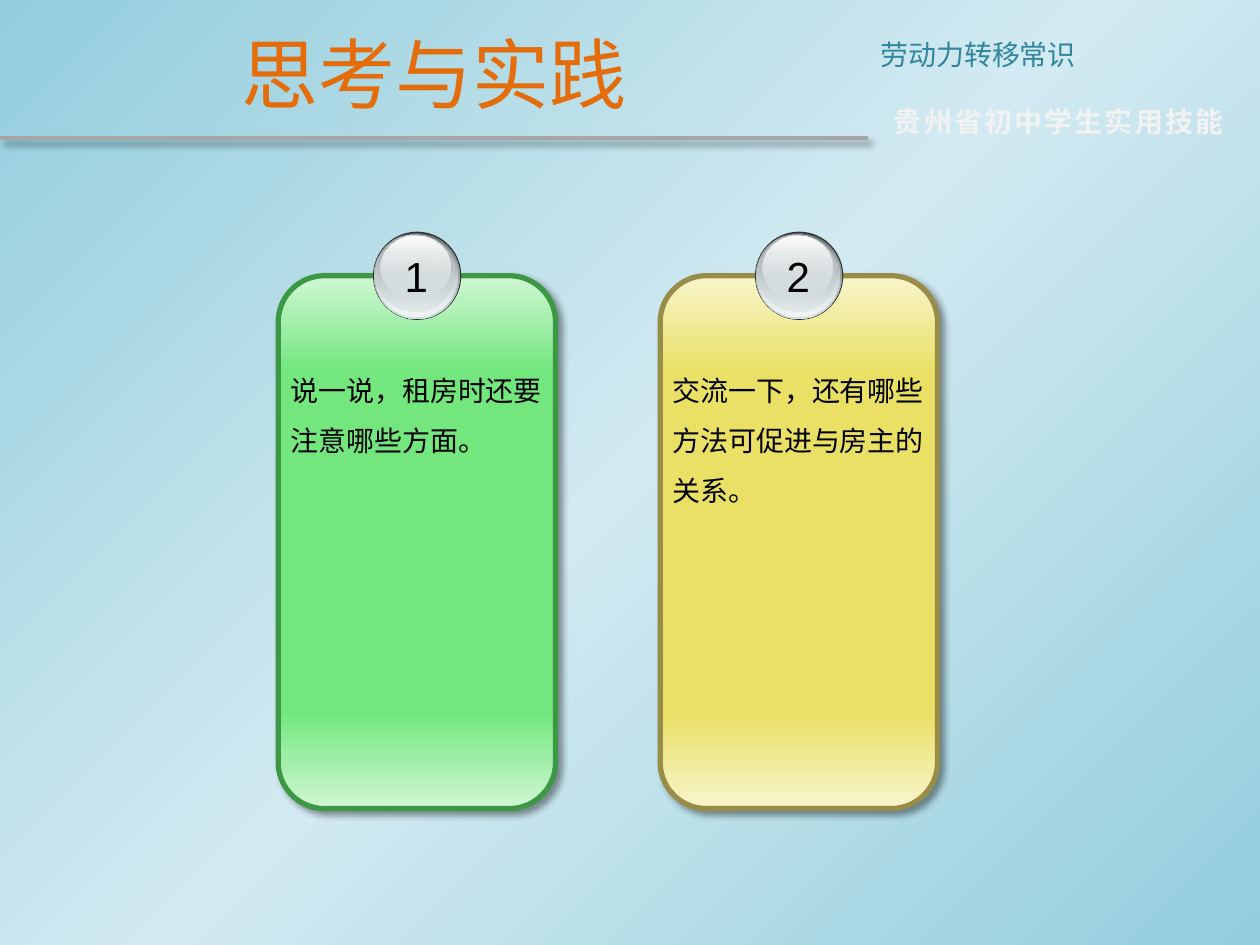
from lxml import etree
from pptx import Presentation
from pptx.dml.color import RGBColor
from pptx.enum.shapes import MSO_CONNECTOR, MSO_SHAPE
from pptx.enum.text import MSO_ANCHOR, MSO_AUTO_SIZE, PP_ALIGN
from pptx.oxml.ns import qn
from pptx.util import Cm, Pt

ROUND, OVAL = MSO_SHAPE.ROUNDED_RECTANGLE, MSO_SHAPE.OVAL
STRAIGHT = MSO_CONNECTOR.STRAIGHT
MIDDLE = MSO_ANCHOR.MIDDLE
GROW, FIXED = MSO_AUTO_SIZE.SHAPE_TO_FIT_TEXT, MSO_AUTO_SIZE.NONE
LEFT, CENTER, JUSTIFY = PP_ALIGN.LEFT, PP_ALIGN.CENTER, PP_ALIGN.JUSTIFY


def color(code):
    return RGBColor.from_string(code)


def add(parent, tag, **attrs):
    node = etree.SubElement(parent, qn(tag))
    for key, val in attrs.items():
        node.set(key, str(val))
    return node


def blend(fill, root, stops, angle):
    """Fill with stops of (percent, colour[, opacity percent])."""
    fill.gradient()
    grad = next(root.iter(qn("a:gradFill")))
    for child in list(grad):
        grad.remove(child)
    group = add(grad, "a:gsLst")
    for pos, code, *alpha in stops:
        stop = add(group, "a:gs", pos=pos * 1000)
        tone = add(stop, "a:srgbClr", val=code)
        if alpha:
            add(tone, "a:alpha", val=alpha[0] * 1000)
    add(grad, "a:lin", ang=angle * 60000, scaled=0)


def shade(shape):
    """Replace the theme shadow with a soft one to the lower right."""
    props = shape._element.spPr
    for old in props.findall(qn("a:effectLst")):
        props.remove(old)
    cast = add(add(props, "a:effectLst"), "a:outerShdw", blurRad=Pt(4),
               dist=Pt(3), dir=45 * 60000, algn="tl", rotWithShape=0)
    add(add(cast, "a:srgbClr", val="000000"), "a:alpha", val=40000)


class Deck:
    font = "Noto Sans CJK SC"
    digit = "Arial"

    def __init__(self):
        self.prs = Presentation()
        self.prs.slide_width, self.prs.slide_height = Cm(25.4), Cm(19.05)
        self.slide = self.prs.slides.add_slide(self.prs.slide_layouts[5])

    def back(self, stops, angle):
        blend(self.slide.background.fill, self.slide._element, stops, angle)

    def put(self, frame, text, size, code, align=LEFT, font=None,
            bold=False, space=None, gap=None):
        par = frame.paragraphs[0]
        par.alignment = align
        if space:
            par.line_spacing = space
        run = par.add_run()
        run.text = text
        run.font.size, run.font.bold = Pt(size), bold
        run.font.color.rgb = color(code)
        run.font.name = font or self.font
        props = run._r.get_or_add_rPr()
        add(props, "a:ea", typeface=font or self.font)
        if gap:
            props.set("spc", str(gap))

    def title(self, box, text, size, code):
        head = self.slide.shapes.title
        head.left, head.top, head.width, head.height = map(Cm, box)
        frame = head.text_frame
        frame.vertical_anchor, frame.auto_size = MIDDLE, FIXED
        self.put(frame, text, size, code, CENTER)

    def text(self, box, text, size, code, home=None, wrap=True, **style):
        home = home or self.slide
        frame = home.shapes.add_textbox(*map(Cm, box)).text_frame
        frame.word_wrap, frame.auto_size = wrap, GROW
        self.put(frame, text, size, code, **style)

    def shape(self, home, kind, box, fill, line=None):
        item = home.shapes.add_shape(kind, *map(Cm, box))
        item.shadow.inherit = False
        if isinstance(fill, str):
            item.fill.solid()
            item.fill.fore_color.rgb = color(fill)
        else:
            blend(item.fill, item._element, fill, 90)
        if line:
            item.line.color.rgb, item.line.width = color(line), Pt(3)
        else:
            item.line.fill.background()
        return item

    def rule(self, ends, code, width):
        line = self.slide.shapes.add_connector(STRAIGHT, *map(Cm, ends))
        line.line.color.rgb, line.line.width = color(code), Pt(width)
        shade(line)

    def card(self, left, num, text, high, pale, full, edge):
        group = self.slide.shapes.add_group_shape()
        stops = [(0, pale), (18, full), (82, full), (100, pale)]
        shade(self.shape(group, ROUND, (left, 5.56, 5.59, 10.74), stops, edge))
        self.text((left, 7.06, 5.59, high), text, 16, "000000", group,
                  space=1.5)
        # Glass ball made of stacked discs
        for dx, top, wide, tall, fill in BALL:
            self.shape(group, OVAL, (left + dx, top, wide, tall), fill)
        self.text((left + 2.29, 4.93, 0.99, 1.27), num, 24, "000000", group,
                  wrap=False, align=CENTER, font=self.digit)


# Discs: offset from the card, top, width, height, fill
BALL = [
    (1.91, 4.67, 1.78, 1.78, "333333"),
    (1.93, 4.70, 1.73, 1.73, [(0, "636869"), (100, "D6E1E2")]),
    (1.94, 4.70, 1.68, 1.69, [(0, "D6E1E2", 0), (100, "F1F5F5")]),
    (1.96, 4.72, 1.60, 1.57, [(0, "AAB2B3"), (100, "D6E1E2", 48)]),
    (2.06, 4.75, 1.42, 1.27, [(0, "FFFFFF"), (100, "D6E1E2", 38)]),
]
CARDS = [
    ("说一说，租房时还要注意哪些方面。", 2.18, "D0F7D4", "73E77E", "3C9844"),
    ("交流一下，还有哪些方法可促进与房主的关系。", 3.23,
     "F8F5CC", "E9E065", "978D48"),
]


def main():
    deck = Deck()
    deck.back([(0, "93CDDD"), (50, "D2EAF1"), (100, "93CDDD")], 45)

    # Header
    deck.rule((0, 2.79, 17.5, 2.79), "A6A6A6", 2.25)
    deck.text((17.5, 0.64, 7.9, 0.94), "劳动力转移常识", 16, "31859C",
              align=JUSTIFY)
    deck.text((17.77, 1.98, 7.63, 0.94), "贵州省初中学生实用技能", 16,
              "F2F2F2", bold=True, gap=130)
    deck.title((0, 0.18, 17.5, 2.59), "思考与实践", 44, "E46C0A")

    # Numbered cards
    for num, card in enumerate(CARDS):
        deck.card(5.61 + 7.7 * num, str(num + 1), *card)

    deck.prs.save("out.pptx")


if __name__ == "__main__":
    main()
